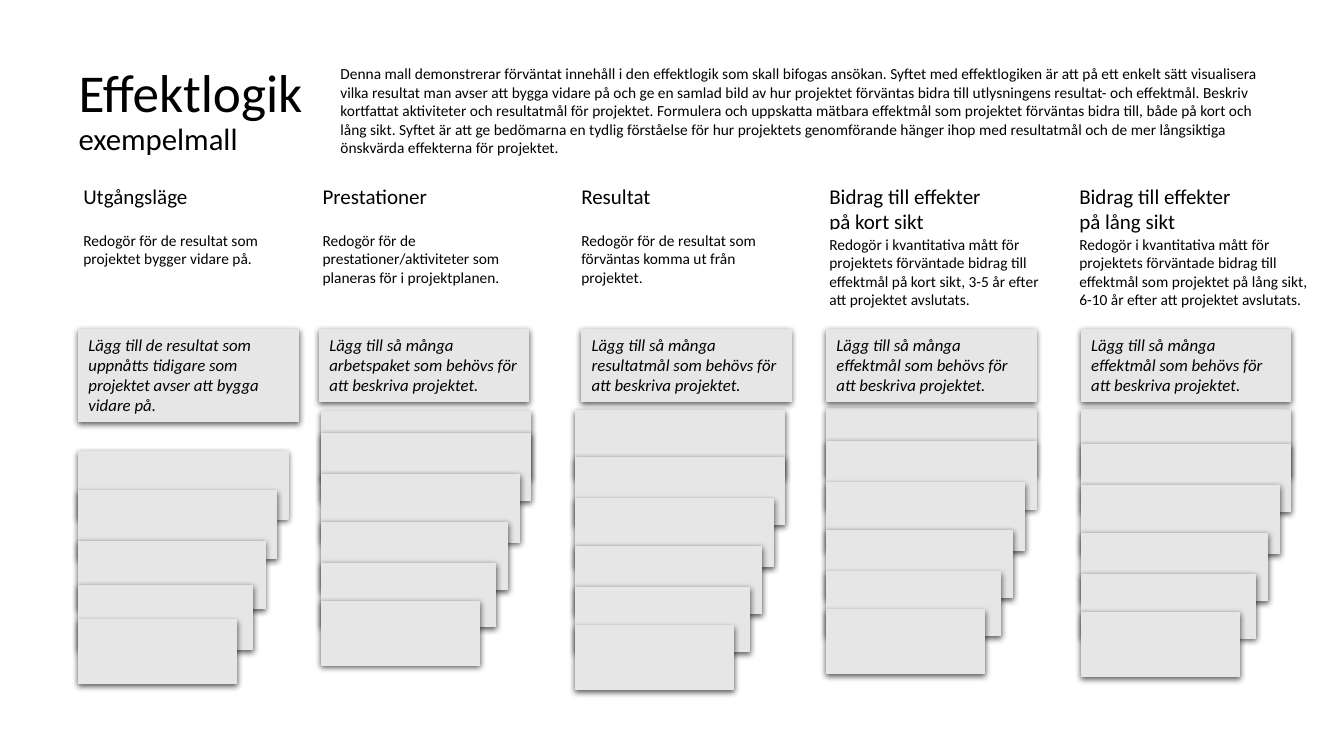
from lxml import etree
from pptx import Presentation
from pptx import util as u
from pptx.dml.color import RGBColor
from pptx.enum import shapes, text
from pptx.oxml import ns

BLACK = RGBColor(0x00, 0x00, 0x00)
WHITE = RGBColor(0xFF, 0xFF, 0xFF)
GREY = RGBColor(0xE7, 0xE6, 0xE6)
FONT = "Calibri"

TITLE = [("Effektlogik", 38), ("exempelmall", 22)]
INTRO = (
    "Denna mall demonstrerar förväntat innehåll i den effektlogik som skall bifogas ansökan. "
    "Syftet med effektlogiken är att på ett enkelt sätt visualisera vilka resultat man avser "
    "att bygga vidare på och ge en samlad bild av hur projektet förväntas bidra till "
    "utlysningens resultat- och effektmål. Beskriv kortfattat aktiviteter och resultatmål för "
    "projektet. Formulera och uppskatta mätbara effektmål som projektet förväntas bidra till, "
    "både på kort och lång sikt. Syftet är att ge bedömarna en tydlig förståelse för hur "
    "projektets genomförande hänger ihop med resultatmål och de mer långsiktiga önskvärda "
    "effekterna för projektet."
)

COLUMNS = [
    dict(head=["Utgångsläge"],
         body="Redogör för de resultat som projektet bygger vidare på.",
         note="Lägg till de resultat som uppnåtts tidigare som projektet avser att bygga vidare på.",
         text_x=1.85, body_box=(5.69, 5.11, 1.19), note_box=(1.98, 5.54, 2.31),
         stack_x=1.98, back_y=None, stack_y=11.38, steps=(0, 0.99, 2.26, 3.38, 4.24)),
    dict(head=["Prestationer"],
         body="Redogör för de prestationer/aktiviteter som planeras för i projektplanen.",
         note="Lägg till så många arbetspaket som behövs för att beskriva projektet.",
         text_x=7.88, body_box=(5.69, 5.11, 1.68), note_box=(8.05, 5.28, 1.8),
         stack_x=8.1, back_y=10.36, stack_y=10.92),
    dict(head=["Resultat"],
         body="Redogör för de resultat som förväntas komma ut från projektet.",
         note="Lägg till så många resultatmål som behövs för att beskriva projektet.",
         text_x=14.4, body_box=(5.69, 5.11, 1.68), note_box=(14.66, 5.28, 1.8),
         stack_x=14.5, back_y=10.34, stack_y=11.53),
    dict(head=["Bidrag till effekter", "på kort sikt"],
         body="Redogör i kvantitativa mått för projektets förväntade bidrag till effektmål "
              "på kort sikt, 3-5 år efter att projektet avslutats.",
         note="Lägg till så många effektmål som behövs för att beskriva projektet.",
         text_x=20.65, body_box=(5.79, 6.3, 2.13), note_box=(20.83, 5.28, 1.8),
         stack_x=20.83, back_y=10.29, stack_y=11.13),
    dict(head=["Bidrag till effekter", "på lång sikt"],
         body="Redogör i kvantitativa mått för projektets förväntade bidrag till effektmål "
              "som projektet på lång sikt, 6-10 år efter att projektet avslutats.",
         note="Lägg till så många effektmål som behövs för att beskriva projektet.",
         text_x=26.95, body_box=(5.79, 6.63, 2.13), note_box=(27.25, 5.28, 1.8),
         stack_x=27.25, back_y=10.31, stack_y=11.2, head_on_top=True),
]
STEPS = (0, 1.04, 2.24, 3.28, 4.24)
CARD_SIZES = [(5.28, 1.7), (5.0, 1.7), (4.7, 1.7), (4.39, 1.6), (3.99, 1.6)]
HEAD_Y, HEAD_W, HEAD_H = 4.5, 7.42, 1.55
NOTE_Y = 8.31


def add_text(sp, lines, italic=False, anchor=text.MSO_ANCHOR.TOP, spacing=1.0):
    tf = sp.text_frame
    tf.word_wrap = True
    tf.vertical_anchor = anchor
    for i, (line, size) in enumerate(lines):
        p = tf.add_paragraph() if i else tf.paragraphs[0]
        p.alignment = text.PP_ALIGN.LEFT
        p.line_spacing = spacing
        r = p.add_run()
        r.text = line
        r.font.name = FONT
        r.font.size = u.Pt(size)
        r.font.italic = italic
        r.font.color.rgb = BLACK


def add_box(s, *box):
    return s.shapes.add_textbox(*map(u.Cm, box))


def add_rect(s, *box, fill=WHITE):
    sp = s.shapes.add_shape(shapes.MSO_SHAPE.RECTANGLE, *map(u.Cm, box))
    sp.fill.solid()
    sp.fill.fore_color.rgb = fill
    sp.line.fill.background()
    sp.shadow.inherit = False
    return sp


def add_card(s, *box):
    sp = add_rect(s, *box, fill=GREY)
    sp.line.color.rgb = GREY
    sp.line.width = u.Pt(0.75)
    effects = sp._element.spPr.find(ns.qn("a:effectLst"))
    shadow = etree.SubElement(effects, ns.qn("a:outerShdw"), blurRad=str(u.Pt(4.5)),
                              dist=str(u.Pt(1.5)), dir="5400000", algn="ctr", rotWithShape="0")
    color = etree.SubElement(shadow, ns.qn("a:srgbClr"), val="000000")
    etree.SubElement(color, ns.qn("a:alpha"), val="63000")
    return sp


def add_head(s, col):
    sp = add_box(s, col["text_x"], HEAD_Y, HEAD_W, HEAD_H)
    add_text(sp, [(line, 15) for line in col["head"]])


def add_body(s, col):
    add_text(add_rect(s, col["text_x"], *col["body_box"]), [(col["body"], 11)])


def add_column(s, col):
    parts = [add_head, add_body]
    for part in reversed(parts) if col.get("head_on_top") else parts:
        part(s, col)
    x, w, h = col["note_box"]
    add_text(add_card(s, x, NOTE_Y, w, h), [(col["note"], 12)], italic=True)
    for step, size in zip(col.get("steps", STEPS), CARD_SIZES):
        add_card(s, col["stack_x"], col["stack_y"] + step, *size)


def main():
    prs = Presentation()
    prs.slide_width, prs.slide_height = u.Cm(33.87), u.Cm(19.05)
    s = prs.slides.add_slide(prs.slide_layouts[6])
    for col in COLUMNS:
        if col["back_y"]:
            add_card(s, col["stack_x"], col["back_y"], *CARD_SIZES[0])
    add_text(add_box(s, 1.73, 0.99, 30.4, 3.68), TITLE,
             anchor=text.MSO_ANCHOR.MIDDLE, spacing=0.9)
    add_text(add_rect(s, 8.33, 1.5, 23.9, 2.69), [(INTRO, 11)])
    for col in COLUMNS:
        add_column(s, col)
    prs.save("out.pptx")


if __name__ == "__main__":
    main()
